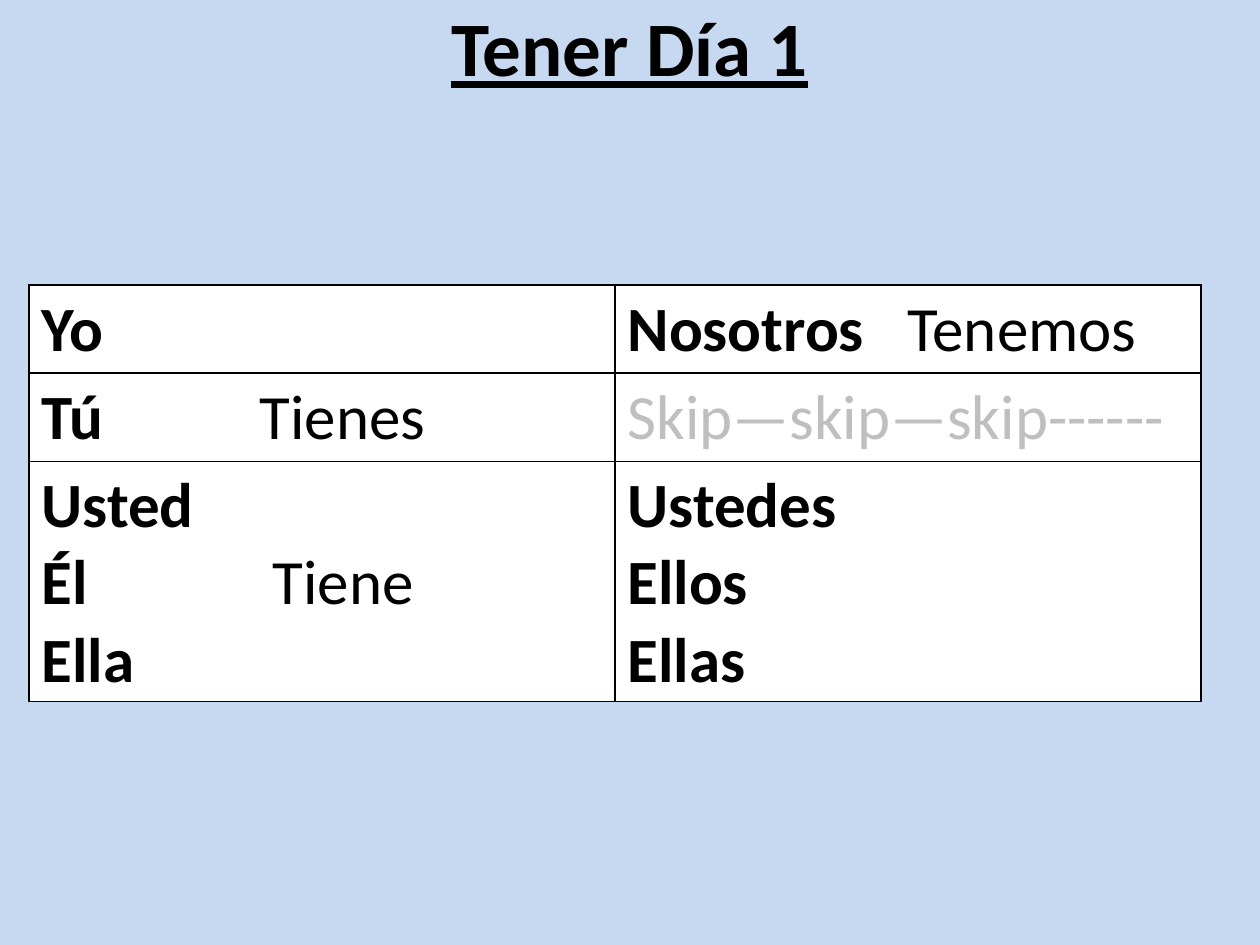
"""Build a slide with the conjugation table of the verb tener."""
import pptx
import pptx.dml.color
import pptx.enum.text
import pptx.oxml
import pptx.oxml.ns
import pptx.util

RGB = pptx.dml.color.RGBColor
SKY = RGB(0xC6, 0xD9, 0xF1)
WHITE = RGB(0xFF, 0xFF, 0xFF)
BLACK = RGB(0x00, 0x00, 0x00)
GRAY = RGB(0xBF, 0xBF, 0xBF)
FONT = "Calibri"
SCALE = 914400 // 126

TITLE = "Tener Día 1"
SKIP = "Skip—skip—skip------"
VERBS = {
    "Nosotros": ("Tenemos", 280),
    "Tú": ("Tienes", 218),
    "Él": ("Tiene", 231),
}
GRID = [
    [["Yo"], ["Nosotros"]],
    [["Tú"], [SKIP]],
    [["Usted", "Él", "Ella"], ["Ustedes", "Ellos", "Ellas"]],
]
WIDTHS = [586, 586]
HEIGHTS = [88, 88, 240]


def px(num):
    return pptx.util.Emu(num * SCALE)


def style(run, size, bold, color=BLACK):
    font = run.font
    font.name, font.size, font.bold = FONT, pptx.util.Pt(size), bold
    font.color.rgb = color


def add_tab(para, pos):
    ns = pptx.oxml.ns.nsdecls("a")
    para._p.get_or_add_pPr().append(pptx.oxml.parse_xml(
        f'<a:tabLst {ns}><a:tab pos="{px(pos)}" algn="l"/></a:tabLst>'))


def add_edges(cell):
    ns = pptx.oxml.ns.nsdecls("a")
    props = cell._tc.get_or_add_tcPr()
    for spot, side in enumerate("LRTB"):
        props.insert(spot, pptx.oxml.parse_xml(
            f'<a:ln{side} {ns} w="12700"><a:solidFill><a:srgbClr val="{BLACK}"/>'
            f'</a:solidFill></a:ln{side}>'))


def fill_cell(cell, lines):
    cell.fill.solid()
    cell.fill.fore_color.rgb = WHITE
    add_edges(cell)
    cell.text_frame.text = "\n".join(lines)
    for para, line in zip(cell.text_frame.paragraphs, lines):
        skip = line == SKIP
        style(para.runs[0], 36, not skip, GRAY if skip else BLACK)
        if line in VERBS:
            verb, pos = VERBS[line]
            add_tab(para, pos)
            run = para.add_run()
            run.text = "\t" + verb
            style(run, 36, False)


def add_title(slide):
    box = slide.shapes.add_textbox(px(0), px(-39), px(1260), px(170))
    frame = box.text_frame
    frame.word_wrap = True
    frame.vertical_anchor = pptx.enum.text.MSO_ANCHOR.MIDDLE
    frame.text = TITLE
    para = frame.paragraphs[0]
    para.alignment = pptx.enum.text.PP_ALIGN.CENTER
    style(para.runs[0], 44, True)
    para.runs[0].font.underline = True


def add_grid(slide):
    table = slide.shapes.add_table(
        len(HEIGHTS), len(WIDTHS), px(29), px(285),
        px(sum(WIDTHS)), px(sum(HEIGHTS))).table
    for col, wide in zip(table.columns, WIDTHS):
        col.width = px(wide)
    for row, high, texts in zip(table.rows, HEIGHTS, GRID):
        row.height = px(high)
        for cell, lines in zip(row.cells, texts):
            fill_cell(cell, lines)


def main():
    deck = pptx.Presentation()
    deck.slide_width, deck.slide_height = px(1260), px(945)
    slide = deck.slides.add_slide(deck.slide_layouts[6])
    slide.background.fill.solid()
    slide.background.fill.fore_color.rgb = SKY
    add_title(slide)
    add_grid(slide)
    deck.save("out.pptx")


if __name__ == "__main__":
    main()
